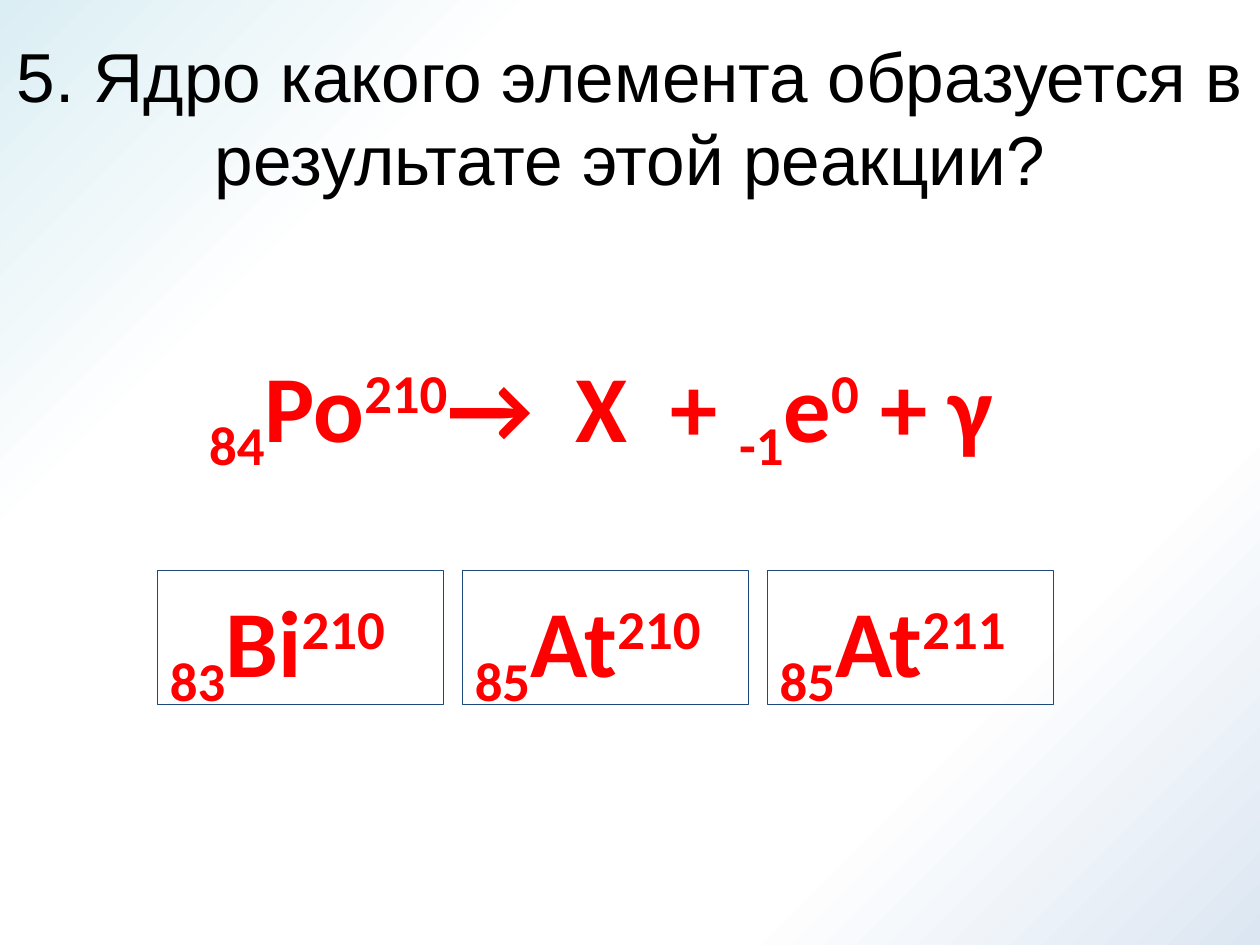
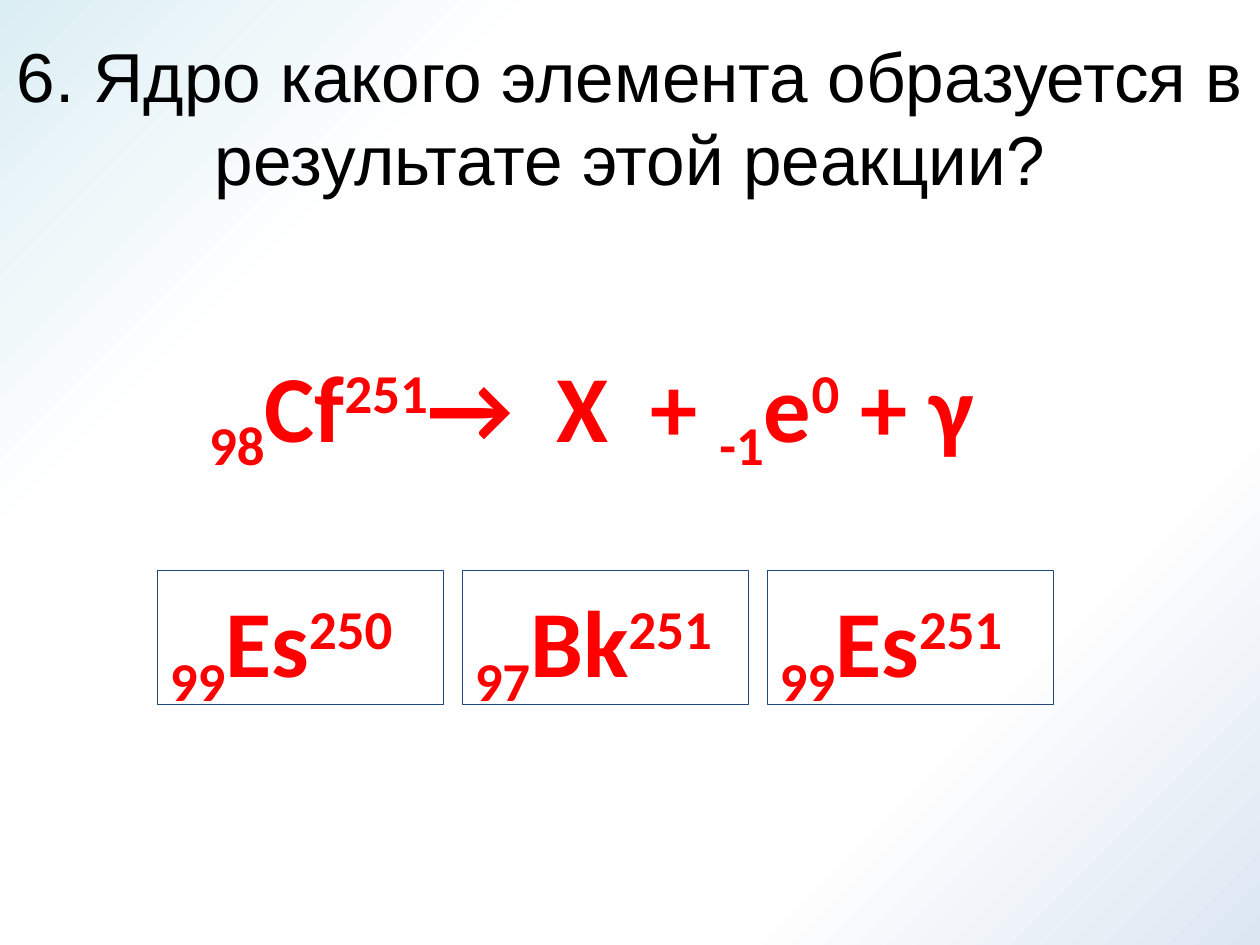
from dataclasses import dataclass

from lxml.etree import SubElement
from pptx import Presentation
from pptx.dml.color import RGBColor
from pptx.enum.shapes import MSO_SHAPE
from pptx.enum.text import MSO_ANCHOR, MSO_AUTO_SIZE, PP_ALIGN
from pptx.oxml.ns import qn
from pptx.presentation import Presentation as Deck
from pptx.shapes.base import BaseShape
from pptx.slide import SlideMaster
from pptx.text.text import TextFrame
from pptx.util import Inches, Pt

BLACK = RGBColor(0x00, 0x00, 0x00)
RED = RGBColor(0xFF, 0x00, 0x00)
NAVY = RGBColor(0x1F, 0x49, 0x7D)
WHITE = RGBColor(0xFF, 0xFF, 0xFF)
PALE_BLUE = RGBColor(0xDC, 0xE6, 0xF2)
PALE_CYAN = RGBColor(0xDB, 0xEE, 0xF4)

BACKGROUND_STOPS = ((0, PALE_BLUE), (24, WHITE), (75, WHITE), (100, PALE_CYAN))
BACKGROUND_ANGLE = 225

TITLE_FONT = "Arial"
FORMULA_FONT = "Calibri"
QUESTION = "Ядро какого элемента образуется в результате этой реакции?"

SUBSCRIPT = -25
SUPERSCRIPT = 30
HANGING_INDENT = Inches(0.38)

ANSWER_LEFT = Inches(1.25)
ANSWER_TOP = Inches(4.53)
ANSWER_WIDTH = Inches(2.27)
ANSWER_HEIGHT = Inches(1.06)
ANSWER_STEP = Inches(2.42)


@dataclass(frozen=True)
class Piece:
    text: str
    baseline: int = 0


@dataclass(frozen=True)
class Nuclide:
    charge: str
    symbol: str
    mass: str

    def pieces(self) -> list[Piece]:
        return [
            Piece(self.charge, SUBSCRIPT),
            Piece(self.symbol),
            Piece(self.mass, SUPERSCRIPT),
        ]


@dataclass(frozen=True)
class Question:
    number: int
    parent: Nuclide
    answers: tuple[Nuclide, ...]


ELECTRON = Nuclide("-1", "e", "0")

QUESTIONS = (
    Question(
        5,
        Nuclide("84", "Po", "210"),
        (
            Nuclide("83", "Bi", "210"),
            Nuclide("85", "At", "210"),
            Nuclide("85", "At", "211"),
        ),
    ),
    Question(
        6,
        Nuclide("98", "Cf", "251"),
        (
            Nuclide("99", "Es", "250"),
            Nuclide("97", "Bk", "251"),
            Nuclide("99", "Es", "251"),
        ),
    ),
)


def set_background(master: SlideMaster) -> None:
    fill = master.background.fill
    fill.gradient()
    gradient = master.element.find(".//" + qn("p:bgPr") + "/" + qn("a:gradFill"))
    for child in list(gradient):
        gradient.remove(child)
    stops = SubElement(gradient, qn("a:gsLst"))
    for percent, color in BACKGROUND_STOPS:
        stop = SubElement(stops, qn("a:gs"), pos=str(percent * 1000))
        SubElement(stop, qn("a:srgbClr"), val=str(color))
    SubElement(gradient, qn("a:lin"), ang=str(BACKGROUND_ANGLE * 60000), scaled="0")


def place(shape: BaseShape, left: float, top: float, width: float, height: float) -> None:
    shape.left, shape.top = Inches(left), Inches(top)
    shape.width, shape.height = Inches(width), Inches(height)


def write_formula(frame: TextFrame, pieces: list[Piece]) -> None:
    frame.auto_size = MSO_AUTO_SIZE.NONE
    frame.word_wrap = True
    frame.vertical_anchor = MSO_ANCHOR.TOP
    frame.margin_top = Inches(0.1)
    formula = frame.paragraphs[0]
    formula.alignment = PP_ALIGN.LEFT
    formula.space_before = Pt(0)
    properties = formula._p.get_or_add_pPr()
    properties.set("marL", str(HANGING_INDENT))
    properties.set("indent", str(-HANGING_INDENT))
    SubElement(properties, qn("a:buNone"))
    formula.font.name = FORMULA_FONT
    formula.font.size = Pt(54)
    formula.font.bold = True
    formula.font.color.rgb = RED
    for piece in pieces:
        run = formula.add_run()
        run.text = piece.text
        if piece.baseline:
            run._r.get_or_add_rPr().set("baseline", str(piece.baseline * 1000))


def write_title(title: BaseShape, text: str) -> None:
    place(title, 0, 0.3, 10, 1.25)
    frame = title.text_frame
    frame.text = text
    frame.auto_size = MSO_AUTO_SIZE.NONE
    frame.vertical_anchor = MSO_ANCHOR.MIDDLE
    heading = frame.paragraphs[0]
    heading.alignment = PP_ALIGN.CENTER
    heading.font.name = TITLE_FONT
    heading.font.size = Pt(39.6)
    heading.font.color.rgb = BLACK


def add_question(deck: Deck, question: Question) -> None:
    slide = deck.slides.add_slide(deck.slide_layouts[1])
    write_title(slide.shapes.title, f"{question.number}. {QUESTION}")

    reaction = slide.placeholders[1]
    place(reaction, 1.56, 2.66, 6.72, 1.06)
    write_formula(
        reaction.text_frame,
        [
            *question.parent.pieces(),
            Piece("→  X  + "),
            *ELECTRON.pieces(),
            Piece(" + γ"),
        ],
    )

    for column, nuclide in enumerate(question.answers):
        answer = slide.shapes.add_shape(
            MSO_SHAPE.RECTANGLE,
            ANSWER_LEFT + column * ANSWER_STEP,
            ANSWER_TOP,
            ANSWER_WIDTH,
            ANSWER_HEIGHT,
        )
        answer.shadow.inherit = False
        answer.fill.background()
        answer.line.color.rgb = NAVY
        answer.line.width = Pt(0.75)
        write_formula(answer.text_frame, nuclide.pieces())


def main() -> None:
    deck = Presentation()
    deck.slide_width = Inches(10)
    deck.slide_height = Inches(7.5)
    set_background(deck.slide_master)
    for question in QUESTIONS:
        add_question(deck, question)
    deck.save("out.pptx")


if __name__ == "__main__":
    main()
